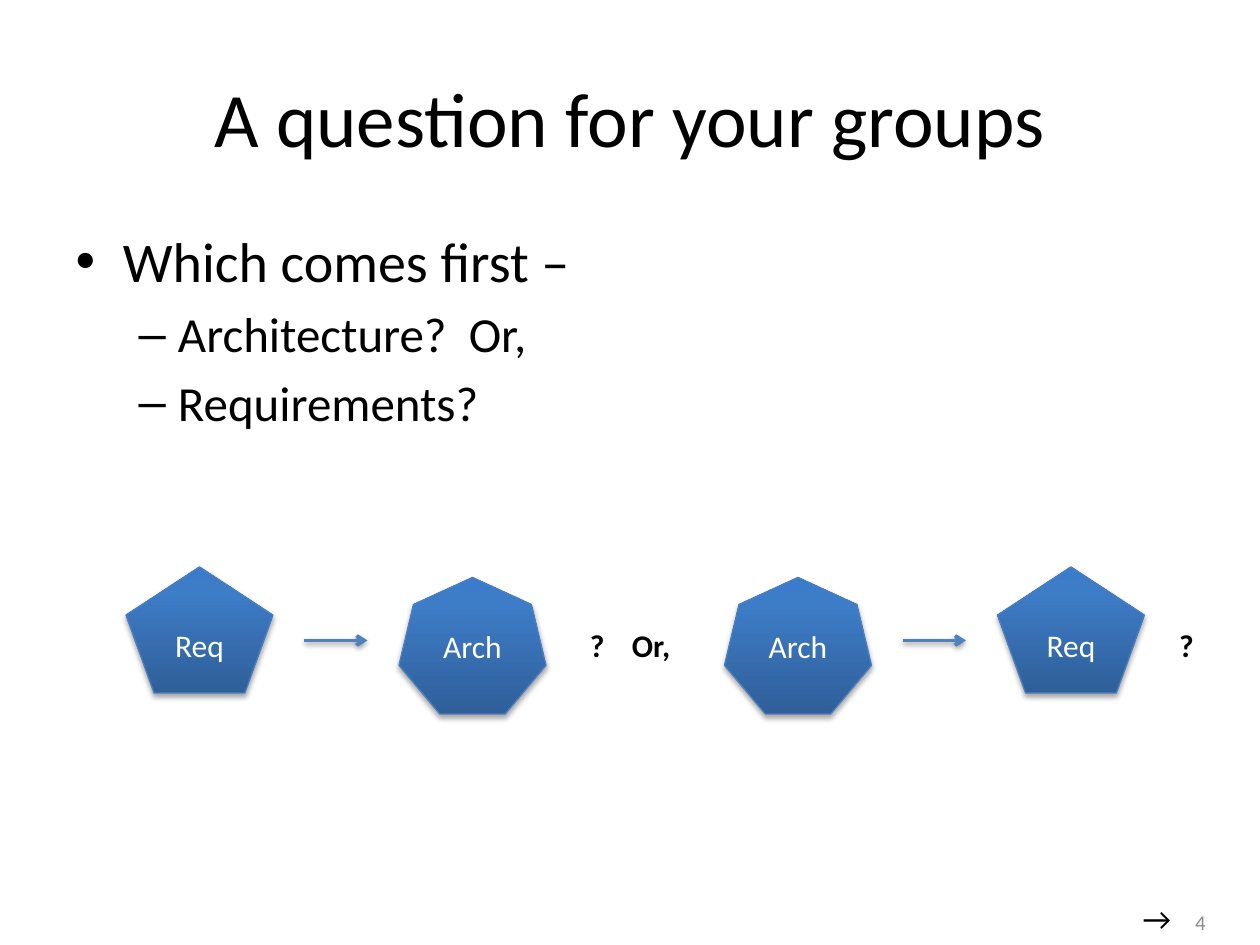
"""Build the slide that asks whether architecture or requirements come first."""
from copy import deepcopy

from lxml.etree import SubElement
from pptx import Presentation
from pptx.dml.color import RGBColor
from pptx.enum.shapes import MSO_CONNECTOR, MSO_SHAPE
from pptx.enum.text import MSO_ANCHOR, MSO_AUTO_SIZE, PP_ALIGN
from pptx.oxml.ns import qn
from pptx.util import Pt

FONT = "Calibri"
COLORS = {
    "text": "000000", "number": "8C8C8C", "label": "FFFFFF",
    "outline": "4B7EBC", "arrow": "4F81BD", "shadow": "000000",
}
GRADIENT = [(0, "2F5F99"), (0.8, "3D7CC7"), (1, "3A7CCB")]

TITLE = "A question for your groups"
BULLETS = [
    ("Which comes first –", 0, 32),
    ("Architecture?  Or,", 1, 28),
    ("Requirements?", 1, 28),
]
KINDS = {
    "Req": (MSO_SHAPE.REGULAR_PENTAGON, 324, 72),
    "Arch": (MSO_SHAPE.HEPTAGON, 330, 78),
}
NODES = [("Req", 72), ("Arch", 228), ("Arch", 414), ("Req", 570)]
NODE_W, ARROW_W, ARROW_Y, GAP = 84, 36, 366, 18
TAB = 24
NOTES = [
    ("?\tOr,", (330, 354, 62.6, 29), True),
    ("?", (666.7, 354, 23, 29), True),
    ("→", (645.8, 510, 32.4, 29), False),
]


def rgb(name):
    return RGBColor.from_string(COLORS[name])


def style(p, size, color, bold=False):
    for r in p.runs:
        r.font.name, r.font.size, r.font.bold = FONT, Pt(size), bold
        r.font.color.rgb = rgb(color)


def place(sp, left, top, width, height):
    sp.left, sp.top, sp.width, sp.height = map(Pt, (left, top, width, height))


def add_shadow(sp, alpha, distance):
    spPr = sp._element.spPr
    effects = spPr.find(qn("a:effectLst"))
    if effects is None:
        effects = SubElement(spPr, qn("a:effectLst"))
    shadow = SubElement(effects, qn("a:outerShdw"), blurRad=str(Pt(3.15)),
                        dist=str(Pt(distance)), dir="5400000", rotWithShape="0")
    color = SubElement(shadow, qn("a:srgbClr"), val=COLORS["shadow"])
    SubElement(color, qn("a:alpha"), val=str(alpha * 1000))


def add_node(s, label, left):
    kind, top, height = KINDS[label]
    sp = s.shapes.add_shape(kind, *map(Pt, (left, top, NODE_W, height)))
    sp.fill.gradient()
    sp.fill.gradient_angle = 90
    stops = sp._element.spPr.find(qn("a:gradFill")).find(qn("a:gsLst"))
    stops.append(deepcopy(stops[-1]))
    for stop, (position, color) in zip(sp.fill.gradient_stops, GRADIENT):
        stop.position = position
        stop.color.rgb = RGBColor.from_string(color)
    sp.line.color.rgb = rgb("outline")
    sp.line.width = Pt(0.75)
    sp.shadow.inherit = False
    add_shadow(sp, 35, 1.8)
    tf = sp.text_frame
    tf.text = label
    tf.vertical_anchor = MSO_ANCHOR.MIDDLE
    tf.paragraphs[0].alignment = PP_ALIGN.CENTER
    style(tf.paragraphs[0], 18, "label")


def add_arrow(s, left):
    line = s.shapes.add_connector(
        MSO_CONNECTOR.STRAIGHT, *map(Pt, (left, ARROW_Y, left + ARROW_W, ARROW_Y)))
    line.line.color.rgb = rgb("arrow")
    line.line.width = Pt(2)
    SubElement(line.line._get_or_add_ln(), qn("a:tailEnd"), type="arrow")
    add_shadow(line, 38, 1.6)


def add_text(s, text, box, size, color, bold=False):
    tf = s.shapes.add_textbox(*map(Pt, box)).text_frame
    tf.word_wrap = False
    tf.text = text
    p = tf.paragraphs[0]
    style(p, size, color, bold)
    if "\t" in text:
        tabs = SubElement(p._p.get_or_add_pPr(), qn("a:tabLst"))
        SubElement(tabs, qn("a:tab"), pos=str(Pt(TAB)), algn="l")
    return tf


def main():
    prs = Presentation()
    prs.slide_width, prs.slide_height = Pt(720), Pt(540)
    s = prs.slides.add_slide(prs.slide_layouts[1])

    title, body = s.shapes.title, s.placeholders[1]
    place(title, 36, 21.6, 648, 90)
    title.text_frame.text = TITLE
    title.text_frame.vertical_anchor = MSO_ANCHOR.MIDDLE
    style(title.text_frame.paragraphs[0], 44, "text")

    place(body, 36, 126, 648, 356.4)
    tf = body.text_frame
    tf.text = "\n".join(text for text, _, _ in BULLETS)
    tf.auto_size = MSO_AUTO_SIZE.NONE
    for p, (_, level, size) in zip(tf.paragraphs, BULLETS):
        p.level = level
        style(p, size, "text")

    for label, left in NODES:
        add_node(s, label, left)
    for _, left in NODES[::2]:
        add_arrow(s, left + NODE_W + GAP)
    for text, box, bold in NOTES:
        add_text(s, text, box, 18, "text", bold)

    number = add_text(s, "4", (528, 512.5, 168, 28.8), 12, "number")
    number.word_wrap = True
    number.vertical_anchor = MSO_ANCHOR.MIDDLE
    number.paragraphs[0].alignment = PP_ALIGN.RIGHT
    prs.save("out.pptx")


if __name__ == "__main__":
    main()
